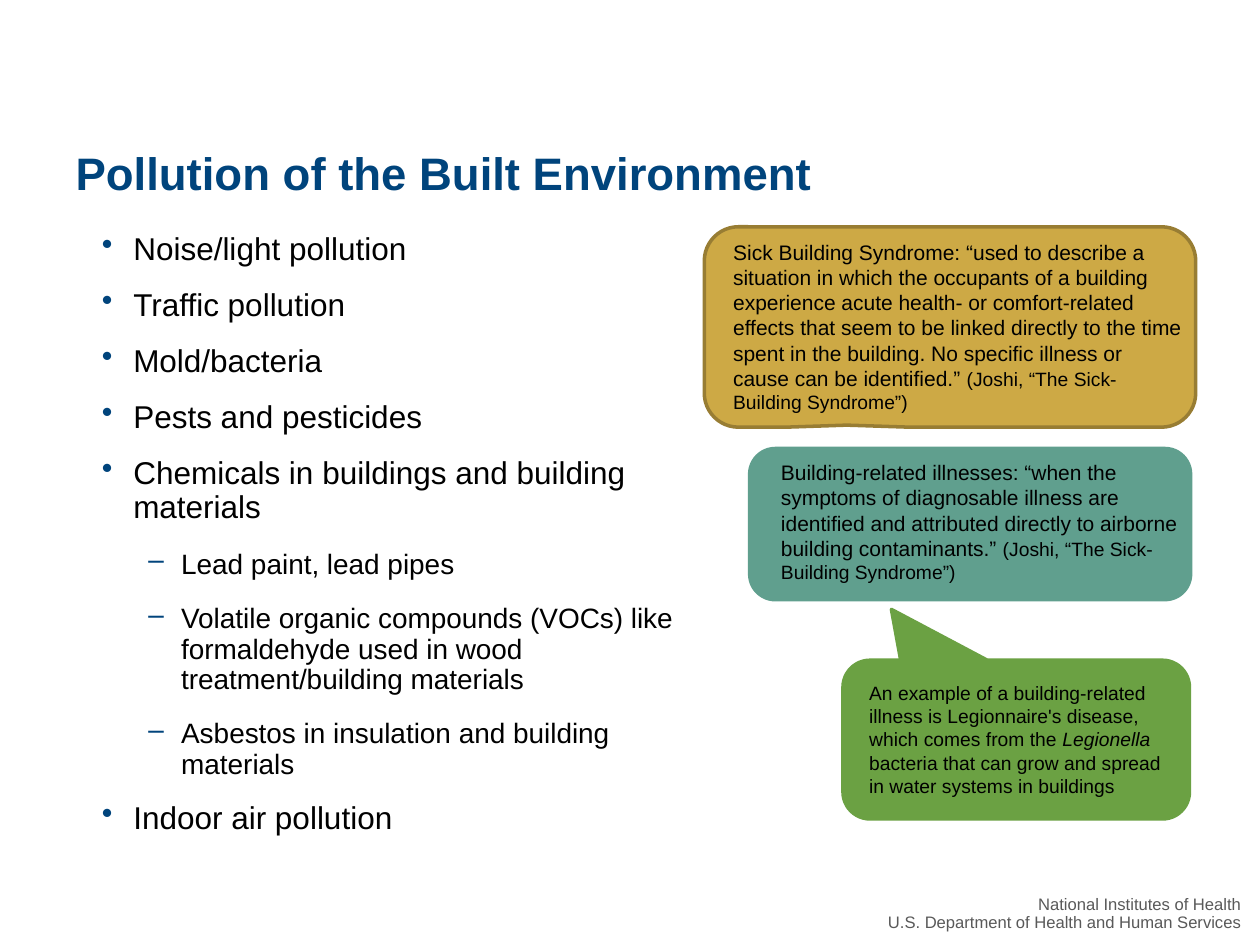
from lxml import etree
from pptx import Presentation
from pptx import util as u
from pptx.dml.color import RGBColor
from pptx.enum import shapes, text
from pptx.oxml.ns import qn

SCALE = 9144
NAVY = RGBColor(0x00, 0x44, 0x7C)
BLACK = RGBColor(0x00, 0x00, 0x00)
GRAY = RGBColor(0x59, 0x59, 0x59)
GOLD = RGBColor(0xCD, 0xA9, 0x45)
BRONZE = RGBColor(0x98, 0x7D, 0x33)
TEAL = RGBColor(0x60, 0x9F, 0x8E)
GREEN = RGBColor(0x6B, 0xA1, 0x43)

CALLOUT = shapes.MSO_SHAPE.ROUNDED_RECTANGULAR_CALLOUT
ROUNDED = shapes.MSO_SHAPE.ROUNDED_RECTANGLE

BULLETS = [
    (0, "Noise/light pollution"),
    (0, "Traffic pollution"),
    (0, "Mold/bacteria"),
    (0, "Pests and pesticides"),
    (0, "Chemicals in buildings and building materials"),
    (1, "Lead paint, lead pipes"),
    (1, "Volatile organic compounds (VOCs) like formaldehyde used in wood treatment/building materials"),
    (1, "Asbestos in insulation and building materials"),
    (0, "Indoor air pollution"),
]
LEVELS = [("•", 18, 12.6, 25, -25), ("–", 16, 14, 63, -26)]
CITATION = ("(Joshi, “The Sick-Building Syndrome”)", 11, False)
SICK_BUILDING = [
    ("Sick Building Syndrome: “used to describe a situation in which the occupants of a building "
     "experience acute health- or comfort-related effects that seem to be linked directly to the "
     "time spent in the building. No specific illness or cause can be identified.” ", 12, False),
    CITATION,
]
RELATED_ILLNESS = [
    ("Building-related illnesses: “when the symptoms of diagnosable illness are identified and "
     "attributed directly to airborne building contaminants.” ", 12, False),
    CITATION,
]
LEGIONELLA = [
    ("An example of a building-related illness is Legionnaire's disease, which comes from the ", 11, False),
    ("Legionella", 11, True),
    (" bacteria that can grow and spread in water systems in buildings", 11, False),
]


def px(value):
    return u.Emu(value * SCALE)


class SlideBuilder:
    font_name = "Arial"

    def __init__(self, presentation):
        self.slide = presentation.slides.add_slide(presentation.slide_layouts[5])

    def style(self, font, size, color=BLACK, bold=False):
        font.name = self.font_name
        font.size = u.Pt(size)
        font.color.rgb = color
        font.bold = bold

    def title(self, box, words):
        shape = self.slide.shapes.title
        shape.left, shape.top, shape.width, shape.height = map(px, box)
        frame = shape.text_frame
        frame.text = words
        frame.auto_size = text.MSO_AUTO_SIZE.NONE
        frame.vertical_anchor = text.MSO_ANCHOR.TOP
        paragraph = frame.paragraphs[0]
        paragraph.alignment = text.PP_ALIGN.LEFT
        self.style(paragraph.font, 26, NAVY, True)

    def text_frame(self, box):
        frame = self.slide.shapes.add_textbox(*map(px, box)).text_frame
        frame.word_wrap = True
        return frame

    def paragraphs(self, frame, lines):
        frame.text = "\n".join(lines)
        return frame.paragraphs

    def bullets(self, box, items):
        paragraphs = self.paragraphs(self.text_frame(box), [words for level, words in items])
        for paragraph, (level, words) in zip(paragraphs, items):
            mark, size, before, margin, indent = LEVELS[level]
            paragraph.level = level
            paragraph.line_spacing = 0.9
            paragraph.space_before = u.Pt(before)
            self.style(paragraph.font, size)
            properties = paragraph._p.get_or_add_pPr()
            properties.set("marL", str(px(margin)))
            properties.set("indent", str(px(indent)))
            color = etree.Element(qn("a:buClr"))
            etree.SubElement(color, qn("a:srgbClr"), val=str(NAVY))
            bullet = etree.Element(qn("a:buChar"), char=mark)
            position = properties.index(properties.find(qn("a:defRPr")))
            properties[position:position] = [color, bullet]

    def panel(self, kind, box, fill, line, adjustments):
        shape = self.slide.shapes.add_shape(kind, *map(px, box))
        shape.shadow.inherit = False
        shape.fill.solid()
        shape.fill.fore_color.rgb = fill
        shape.line.color.rgb = line
        shape.line.width = u.Pt(2)
        for index, value in enumerate(adjustments):
            shape.adjustments[index] = value

    def note(self, box, runs):
        paragraph = self.text_frame(box).paragraphs[0]
        for words, size, italic in runs:
            run = paragraph.add_run()
            run.text = words
            self.style(run.font, size)
            run.font.italic = italic

    def footer(self, box, lines):
        frame = self.text_frame(box)
        frame.word_wrap = False
        frame.vertical_anchor = text.MSO_ANCHOR.BOTTOM
        frame.margin_right = px(15)
        frame.margin_bottom = px(10)
        for paragraph in self.paragraphs(frame, lines):
            paragraph.alignment = text.PP_ALIGN.RIGHT
            paragraph.line_spacing = 0.9
            self.style(paragraph.font, 9.5, GRAY)


def main():
    presentation = Presentation()
    presentation.slide_width, presentation.slide_height = px(1000), px(750)
    builder = SlideBuilder(presentation)
    builder.footer((692, 706, 308, 44),
                   ["National Institutes of Health", "U.S. Department of Health and Human Services"])
    builder.title((50, 110, 900, 80), "Pollution of the Built Environment")
    builder.bullets((71, 180, 477, 517), BULLETS)
    builder.panel(CALLOUT, (559, 180, 390, 159), GOLD, BRONZE, (-0.21, 0.49, 0.17))
    builder.panel(ROUNDED, (595, 356, 350, 120), TEAL, TEAL, (0.17,))
    builder.panel(CALLOUT, (669, 524, 275, 126), GREEN, GREEN, (-0.36, -0.82, 0.17))
    builder.note((572, 185, 378, 151), SICK_BUILDING)
    builder.note((610, 360, 350, 111), RELATED_ILLNESS)
    builder.note((680, 536, 254, 103), LEGIONELLA)
    presentation.save("out.pptx")


if __name__ == "__main__":
    main()
